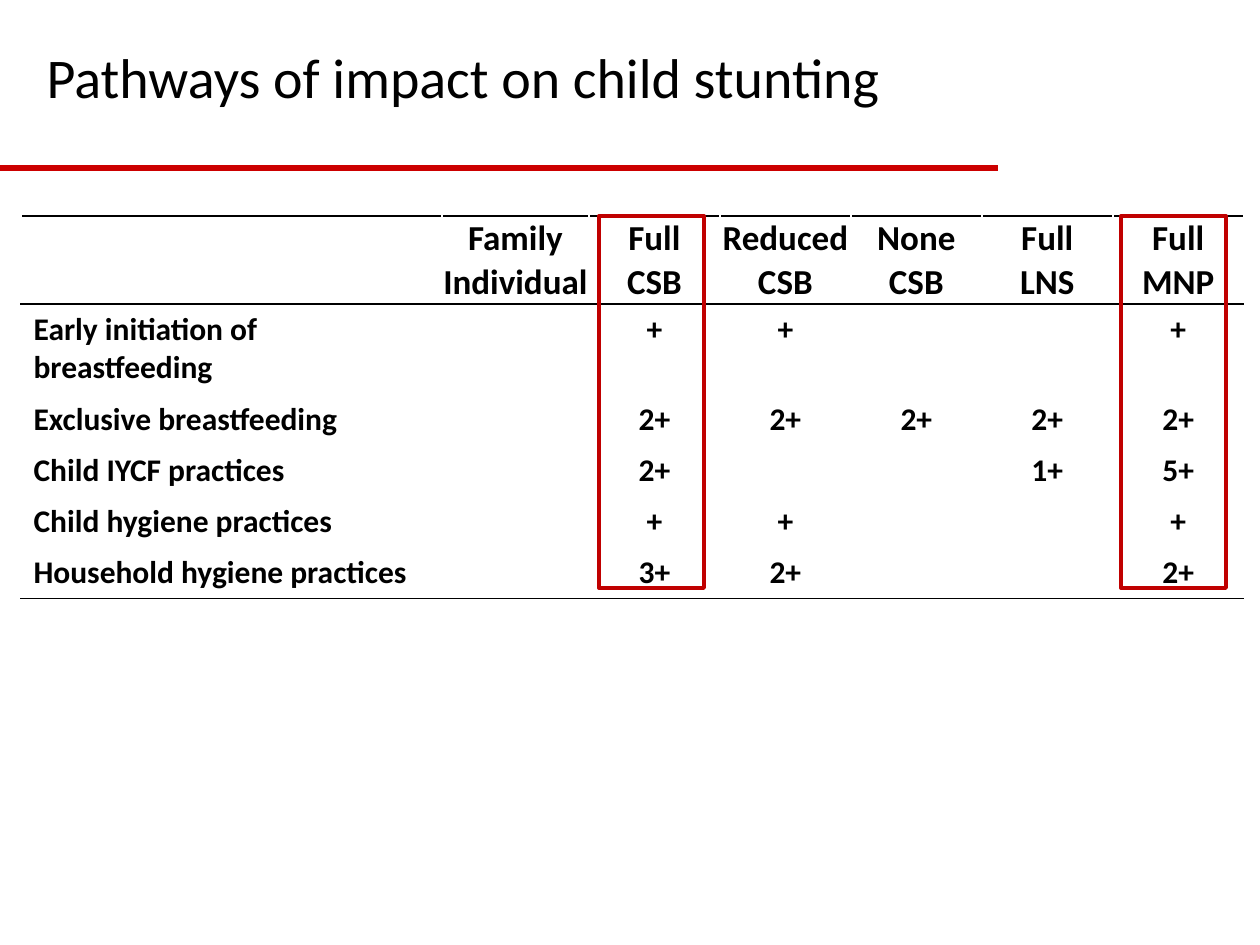
from dataclasses import dataclass

from lxml import etree
from pptx import Presentation
from pptx.dml.color import RGBColor
from pptx.enum.shapes import MSO_CONNECTOR, MSO_SHAPE
from pptx.enum.text import MSO_ANCHOR, PP_ALIGN
from pptx.oxml.ns import qn
from pptx.util import Emu, Pt

RECTANGLE = MSO_SHAPE.RECTANGLE
STRAIGHT = MSO_CONNECTOR.STRAIGHT
MIDDLE, TOP = MSO_ANCHOR.MIDDLE, MSO_ANCHOR.TOP
LEFT, CENTER = PP_ALIGN.LEFT, PP_ALIGN.CENTER
TITLE_ONLY = 5
EMU_PER_PX = 914400 // 126


@dataclass(frozen=True)
class Theme:
    font: str = "Calibri"
    text: str = "000000"
    background: str = "FFFFFF"
    highlight: str = "C00000"
    rule: str = "CC0000"
    title_size: int = 32
    header_size: int = 20
    body_size: int = 18


@dataclass(frozen=True)
class Box:
    left: int
    top: int
    width: int
    height: int

    def emu(self) -> tuple[Emu, Emu, Emu, Emu]:
        return px(self.left), px(self.top), px(self.width), px(self.height)


THEME = Theme()
TITLE_BOX = Box(34, -15, 1086, 183)
COLUMN_WIDTHS = [421, 147] + [131] * 5
ROW_HEIGHTS = [44, 44, 90] + [51] * 4
TABLE_BOX = Box(21, 216, sum(COLUMN_WIDTHS), sum(ROW_HEIGHTS))
HIGHLIGHTS = [Box(left, 216, 105, 372) for left in (599, 1121)]
HEADER_ROWS = 2
ROWS = [
    ["", "Family", "Full", "Reduced", "None", "Full", "Full"],
    ["", "Individual", "CSB", "CSB", "CSB", "LNS", "MNP"],
    ["Early initiation of breastfeeding", "", "+", "+", "", "", "+"],
    ["Exclusive breastfeeding", "", "2+", "2+", "2+", "2+", "2+"],
    ["Child IYCF practices", "", "2+", "", "", "1+", "5+"],
    ["Child hygiene practices", "", "+", "+", "", "", "+"],
    ["Household hygiene practices", "", "3+", "2+", "", "", "2+"],
]
BLACK_RULES = {0, HEADER_ROWS, len(ROWS)}


def px(length: int) -> Emu:
    return Emu(length * EMU_PER_PX)


def rgb(color: str) -> RGBColor:
    return RGBColor.from_string(color)


def style_paragraph(paragraph, size: int, alignment, bold: bool = False) -> None:
    paragraph.alignment = alignment
    font = paragraph.font
    font.name, font.size, font.bold = THEME.font, Pt(size), bold
    font.color.rgb = rgb(THEME.text)


def set_borders(cell, row: int) -> None:
    """Draw white cell edges, with black rules around the header and body."""
    top, bottom = (
        THEME.text if edge in BLACK_RULES else THEME.background
        for edge in (row, row + 1)
    )
    edges = {"lnL": THEME.background, "lnR": THEME.background, "lnT": top, "lnB": bottom}
    properties = cell._tc.get_or_add_tcPr()
    for position, (tag, color) in enumerate(edges.items()):
        line = etree.Element(qn(f"a:{tag}"), w=str(Pt(1)))
        fill = etree.SubElement(line, qn("a:solidFill"))
        etree.SubElement(fill, qn("a:srgbClr"), val=color)
        properties.insert(position, line)


def fill_cell(cell, text: str, row: int, column: int) -> None:
    is_header = row < HEADER_ROWS
    cell.text = text
    cell.vertical_anchor = MIDDLE if is_header else TOP
    if is_header:
        cell.margin_left = cell.margin_right = cell.margin_top = px(1)
        cell.margin_bottom = 0
    size = THEME.header_size if is_header else THEME.body_size
    alignment = LEFT if column == 0 else CENTER
    style_paragraph(cell.text_frame.paragraphs[0], size, alignment, bold=True)
    cell.fill.solid()
    cell.fill.fore_color.rgb = rgb(THEME.background)
    set_borders(cell, row)


def add_title(slide, text: str) -> None:
    title = slide.shapes.title
    title.left, title.top, title.width, title.height = TITLE_BOX.emu()
    title.text_frame.text = text
    title.text_frame.vertical_anchor = MIDDLE
    style_paragraph(title.text_frame.paragraphs[0], THEME.title_size, LEFT)


def add_pathway_table(slide) -> None:
    table = slide.shapes.add_table(
        len(ROWS), len(COLUMN_WIDTHS), *TABLE_BOX.emu()
    ).table
    table.first_row = table.horz_banding = False
    for column, width in zip(table.columns, COLUMN_WIDTHS):
        column.width = px(width)
    for row, height in zip(table.rows, ROW_HEIGHTS):
        row.height = px(height)
    for row_index, texts in enumerate(ROWS):
        for column_index, text in enumerate(texts):
            cell = table.cell(row_index, column_index)
            fill_cell(cell, text, row_index, column_index)


def add_highlight(slide, box: Box) -> None:
    shape = slide.shapes.add_shape(RECTANGLE, *box.emu())
    shape.shadow.inherit = False
    shape.fill.background()
    shape.line.color.rgb = rgb(THEME.highlight)
    shape.line.width = Pt(2.25)


def add_title_rule(slide) -> None:
    rule = slide.shapes.add_connector(STRAIGHT, px(0), px(168), px(998), px(168))
    rule.line.color.rgb = rgb(THEME.rule)
    rule.line.width = Pt(3)
    etree.SubElement(rule._element.spPr, qn("a:effectLst"))


def main() -> None:
    presentation = Presentation()
    presentation.slide_width, presentation.slide_height = px(1260), px(945)
    slide = presentation.slides.add_slide(presentation.slide_layouts[TITLE_ONLY])
    add_title(slide, "Pathways of impact on child stunting")
    add_pathway_table(slide)
    for box in HIGHLIGHTS:
        add_highlight(slide, box)
    add_title_rule(slide)
    presentation.save("out.pptx")


if __name__ == "__main__":
    main()
